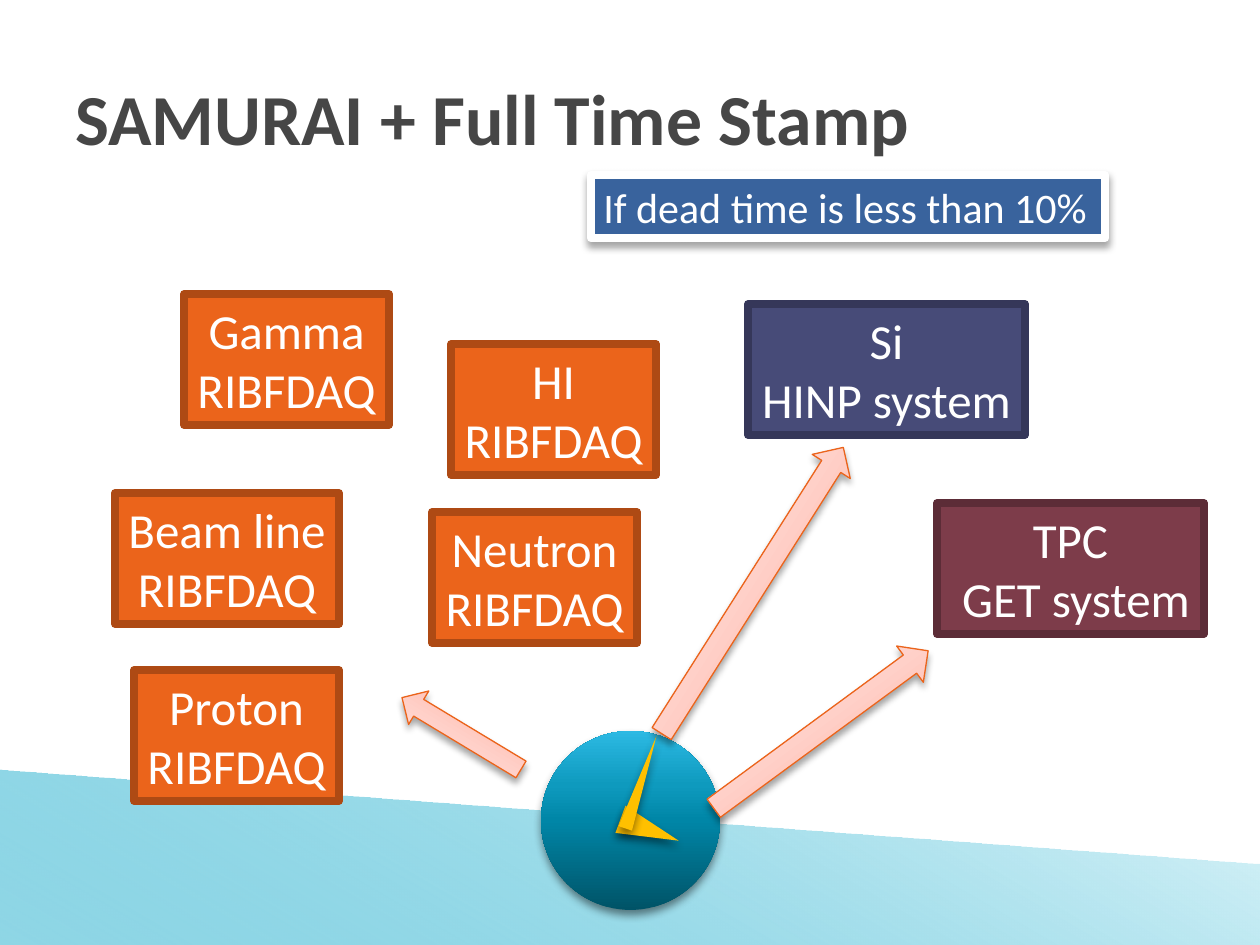
from dataclasses import dataclass

import pptx
import pptx.dml.color
import pptx.enum.shapes
import pptx.enum.text
import pptx.oxml
import pptx.oxml.ns
import pptx.util

EMU_PER_PX = 914400 / 126
BOX_HEIGHT = 131
FONT = "Calibri"
COLORS = {
    "title": "464646",
    "white": "FFFFFF",
    "orange": "EB641B",
    "orange_edge": "AE4A14",
    "indigo": "474B78",
    "indigo_edge": "353759",
    "wine": "7D3C4A",
    "wine_edge": "5C2C37",
    "blue": "39639D",
    "gold": "FFC000",
    "shadow": "000000",
}
MSO_SHAPE = pptx.enum.shapes.MSO_SHAPE
PP_ALIGN = pptx.enum.text.PP_ALIGN


@dataclass(frozen=True)
class Gradient:
    stops: tuple[tuple[int, str, int], ...]
    angle: int


@dataclass(frozen=True)
class Shadow:
    opacity: int
    blur: int
    distance: int


@dataclass(frozen=True)
class SystemBox:
    text: str
    left: int
    top: int
    width: int
    color: str = "orange"


@dataclass(frozen=True)
class Part:
    left: int
    top: int
    width: int
    height: int
    rotation: float = 0


BAND_FILL = Gradient(((0, "DEF5FA", 100), (100, "1FAECD", 50)), 120)
CLOCK_FILL = Gradient(
    ((0, "005367", 100), (50, "0086A7", 100), (70, "0E9ABE", 100), (100, "2CB9E3", 100)), 270
)
ARROW_FILL = Gradient(((0, "FFAC9C", 100), (65, "FFD8D2", 100), (100, "FFE4DF", 100)), 270)
CLOCK_SHADOW = Shadow(45, 5, 3)
SOFT_SHADOW = Shadow(35, 4, 3)

BACK_BOXES = [
    SystemBox("Beam line\nRIBFDAQ", 115, 493, 224),
    SystemBox("Si\nHINP system", 748, 304, 277, "indigo"),
    SystemBox("TPC\n GET system", 937, 503, 267, "wine"),
    SystemBox("Gamma\nRIBFDAQ", 184, 294, 205),
    SystemBox("Proton\nRIBFDAQ", 134, 670, 205),
]
FRONT_BOXES = [
    SystemBox("HI\nRIBFDAQ", 451, 344, 205),
    SystemBox("Neutron\nRIBFDAQ", 432, 512, 205),
]
CLOCK_FACE = Part(541, 731, 179, 179)
CLOCK_HANDS = [Part(635, 799, 29, 62, 110.2), Part(634, 733, 14, 98, 18.6)]
ARROWS = [
    Part(583, 568, 339, 45, 302.4),
    Part(392, 714, 139, 39, 211.1),
    Part(688, 707, 266, 45, 323.7),
]


def px(value: int) -> int:
    return round(value * EMU_PER_PX)


def rgb(name: str) -> pptx.dml.color.RGBColor:
    return pptx.dml.color.RGBColor.from_string(COLORS[name])


def set_gradient(shape, gradient: Gradient) -> None:
    stops = "".join(
        f'<a:gs pos="{position * 1000}"><a:srgbClr val="{color}">'
        f'<a:alpha val="{opacity * 1000}"/></a:srgbClr></a:gs>'
        for position, color, opacity in gradient.stops
    )
    shape.fill.solid()
    properties = shape._element.spPr
    solid = properties.find(pptx.oxml.ns.qn("a:solidFill"))
    properties.replace(solid, pptx.oxml.parse_xml(
        f'<a:gradFill {pptx.oxml.ns.nsdecls("a")} rotWithShape="1"><a:gsLst>{stops}</a:gsLst>'
        f'<a:lin ang="{gradient.angle * 60000}" scaled="0"/></a:gradFill>'
    ))


def set_shadow(shape, shadow: Shadow) -> None:
    effects = shape._element.spPr.find(pptx.oxml.ns.qn("a:effectLst"))
    effects.append(pptx.oxml.parse_xml(
        f'<a:outerShdw {pptx.oxml.ns.nsdecls("a")} blurRad="{pptx.util.Pt(shadow.blur)}" '
        f'dist="{pptx.util.Pt(shadow.distance)}" dir="5400000" algn="ctr" rotWithShape="0">'
        f'<a:srgbClr val="{COLORS["shadow"]}"><a:alpha val="{shadow.opacity * 1000}"/>'
        f'</a:srgbClr></a:outerShdw>'
    ))


def style_shape(shape, fill: str | Gradient, line: str | None = None,
                line_width: float = 0, shadow: Shadow | None = None) -> None:
    shape.shadow.inherit = False
    if isinstance(fill, Gradient):
        set_gradient(shape, fill)
    else:
        shape.fill.solid()
        shape.fill.fore_color.rgb = rgb(fill)
    if line:
        shape.line.color.rgb = rgb(line)
        shape.line.width = pptx.util.Pt(line_width)
    else:
        shape.line.fill.background()
    if shadow:
        set_shadow(shape, shadow)


def add_part(shapes, kind, part: Part):
    shape = shapes.add_shape(kind, px(part.left), px(part.top), px(part.width), px(part.height))
    shape.rotation = part.rotation
    return shape


def write_text(shape, text: str, size: int, color: str, alignment, bold: bool = False) -> None:
    shape.text_frame.text = text
    for paragraph in shape.text_frame.paragraphs:
        paragraph.alignment = alignment
        for run in paragraph.runs:
            run.font.name = FONT
            run.font.size = pptx.util.Pt(size)
            run.font.bold = bold
            run.font.color.rgb = rgb(color)


def fit_to_text(shape) -> None:
    shape.text_frame.word_wrap = False
    shape.text_frame.auto_size = pptx.enum.text.MSO_AUTO_SIZE.SHAPE_TO_FIT_TEXT


def add_system_box(slide, box: SystemBox) -> None:
    shape = add_part(slide.shapes, MSO_SHAPE.RECTANGLE,
                     Part(box.left, box.top, box.width, BOX_HEIGHT))
    style_shape(shape, box.color, f"{box.color}_edge", 4.33)
    write_text(shape, box.text, 28, "white", PP_ALIGN.CENTER)
    fit_to_text(shape)


def add_band(slide) -> None:
    builder = slide.shapes.build_freeform(0, 770, EMU_PER_PX)
    builder.add_line_segments([(1260, 864), (1260, 945), (0, 945)], close=True)
    style_shape(builder.convert_to_shape(), BAND_FILL)


def add_title(slide) -> None:
    title = slide.shapes.add_textbox(px(63), px(38), px(1134), px(157))
    title.text_frame.word_wrap = True
    title.text_frame.vertical_anchor = pptx.enum.text.MSO_ANCHOR.MIDDLE
    write_text(title, "SAMURAI + Full Time Stamp", 41, "title", PP_ALIGN.LEFT, bold=True)


def add_clock(slide) -> None:
    clock = slide.shapes.add_group_shape()
    face = add_part(clock.shapes, MSO_SHAPE.OVAL, CLOCK_FACE)
    style_shape(face, CLOCK_FILL, shadow=CLOCK_SHADOW)
    for hand in CLOCK_HANDS:
        shape = add_part(clock.shapes, MSO_SHAPE.ISOSCELES_TRIANGLE, hand)
        style_shape(shape, "gold", shadow=CLOCK_SHADOW)


def add_condition(slide) -> None:
    shape = add_part(slide.shapes, MSO_SHAPE.RECTANGLE, Part(591, 175, 514, 63))
    style_shape(shape, "blue", "white", 5, SOFT_SHADOW)
    write_text(shape, "If dead time is less than 10%", 24, "white", PP_ALIGN.LEFT)
    fit_to_text(shape)


def main() -> None:
    presentation = pptx.Presentation()
    presentation.slide_width = px(1260)
    presentation.slide_height = px(945)
    slide = presentation.slides.add_slide(presentation.slide_layouts[6])
    add_band(slide)
    add_title(slide)
    for box in BACK_BOXES:
        add_system_box(slide, box)
    add_clock(slide)
    for arrow in ARROWS:
        shape = add_part(slide.shapes, MSO_SHAPE.RIGHT_ARROW, arrow)
        style_shape(shape, ARROW_FILL, "orange", 0.75, SOFT_SHADOW)
    for box in FRONT_BOXES:
        add_system_box(slide, box)
    add_condition(slide)
    presentation.save("out.pptx")


if __name__ == "__main__":
    main()
